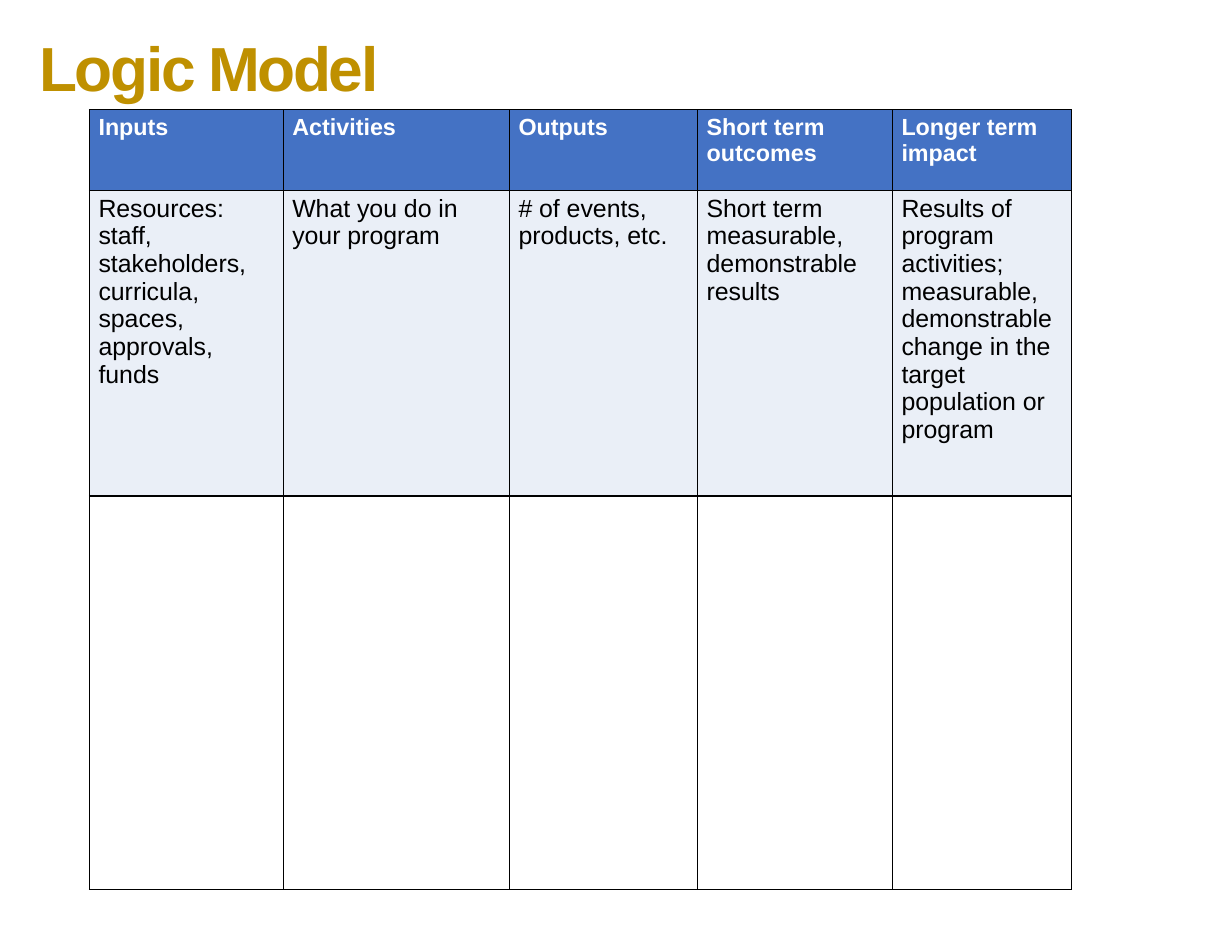
"""Build the logic model slide: a title above a five-column table."""
import dataclasses
import typing

import lxml.etree
import pptx
import pptx.dml.color
import pptx.enum.text
import pptx.oxml.ns
import pptx.util

Inches = pptx.util.Inches


@dataclasses.dataclass(frozen=True)
class Theme:
    font: str = "Arial"
    gold: str = "BF9000"
    blue: str = "4472C4"
    pale: str = "EAEFF7"
    white: str = "FFFFFF"
    black: str = "000000"
    title: float = 40
    head: float = 15
    body: float = 16
    rule: float = 1
    track: float = -1.5


@dataclasses.dataclass(frozen=True)
class Column:
    width: float
    head: str
    body: str


@dataclasses.dataclass(frozen=True)
class Row:
    height: float
    field: str
    fill: str
    color: str
    size: float
    bold: bool = False


THEME = Theme()
WIDTH, HEIGHT = 11, 8.5
COLUMNS = (
    Column(1.73, "Inputs", "Resources:\nstaff, stakeholders, curricula, spaces, approvals, funds"),
    Column(2.02, "Activities", "What you do in your program"),
    Column(1.68, "Outputs", "# of events, products, etc."),
    Column(1.74, "Short term outcomes", "Short term measurable, demonstrable results"),
    Column(1.6, "Longer term impact",
           "Results of program activities; measurable, demonstrable "
           "change in the target population or program"),
)
ROWS = (
    Row(0.72, "head", THEME.blue, THEME.white, THEME.head, True),
    Row(2.73, "body", THEME.pale, THEME.black, THEME.body),
    Row(3.51, "", THEME.white, THEME.black, THEME.body),
)


def rgb(code: str) -> pptx.dml.color.RGBColor:
    """Turn a hex code into a colour."""
    return pptx.dml.color.RGBColor.from_string(code)


def write(frame: typing.Any, text: str, *, size: float, color: str,
          bold: bool = False, track: float = 0) -> None:
    """Fill a text frame with one paragraph per line, all in one format."""
    frame.text = text
    frame.word_wrap = True
    for para in frame.paragraphs:
        para.alignment = pptx.enum.text.PP_ALIGN.LEFT
        for run in para.runs:
            font = run.font
            font.name, font.size, font.bold = THEME.font, pptx.util.Pt(size), bold
            font.color.rgb = rgb(color)
            if track:
                run.font._element.set("spc", str(round(track * 100)))


def border(cell: typing.Any) -> None:
    """Draw a thin rule on all four sides of a cell."""
    qn = pptx.oxml.ns.qn
    props = cell._tc.get_or_add_tcPr()
    for side in ("lnL", "lnR", "lnT", "lnB"):
        line = lxml.etree.SubElement(props, qn(f"a:{side}"), w=str(pptx.util.Pt(THEME.rule)))
        fill = lxml.etree.SubElement(line, qn("a:solidFill"))
        lxml.etree.SubElement(fill, qn("a:srgbClr"), val=THEME.black)


def draw_title(slide: typing.Any, text: str) -> None:
    """Place and format the slide title."""
    title = slide.shapes.title
    title.left, title.top = Inches(0.25), Inches(0.21)
    title.width, title.height = Inches(9.82), Inches(0.77)
    frame = title.text_frame
    write(frame, text, size=THEME.title, color=THEME.gold, bold=True, track=THEME.track)
    frame.vertical_anchor = pptx.enum.text.MSO_ANCHOR.TOP
    frame.auto_size = pptx.enum.text.MSO_AUTO_SIZE.SHAPE_TO_FIT_TEXT


def draw_cell(cell: typing.Any, row: Row, col: Column) -> None:
    """Format one cell and write its text."""
    cell.margin_left = cell.margin_right = Inches(0.08)
    cell.margin_top = cell.margin_bottom = Inches(0.04)
    border(cell)
    cell.fill.solid()
    cell.fill.fore_color.rgb = rgb(row.fill)
    if row.field:
        write(cell.text_frame, getattr(col, row.field),
              size=row.size, color=row.color, bold=row.bold)


def draw_table(slide: typing.Any) -> None:
    """Build the table from its rows and columns."""
    wide = sum(col.width for col in COLUMNS)
    high = sum(row.height for row in ROWS)
    table = slide.shapes.add_table(len(ROWS), len(COLUMNS), Inches(0.8), Inches(0.98),
                                   Inches(wide), Inches(high)).table
    for c, col in enumerate(COLUMNS):
        table.columns[c].width = Inches(col.width)
    for r, row in enumerate(ROWS):
        table.rows[r].height = Inches(row.height)
        for c, col in enumerate(COLUMNS):
            draw_cell(table.cell(r, c), row, col)


def main() -> None:
    """Build and save the slide."""
    deck = pptx.Presentation()
    deck.slide_width, deck.slide_height = Inches(WIDTH), Inches(HEIGHT)
    slide = deck.slides.add_slide(deck.slide_layouts[5])
    draw_title(slide, "Logic Model")
    draw_table(slide)
    deck.save("out.pptx")


if __name__ == "__main__":
    main()
